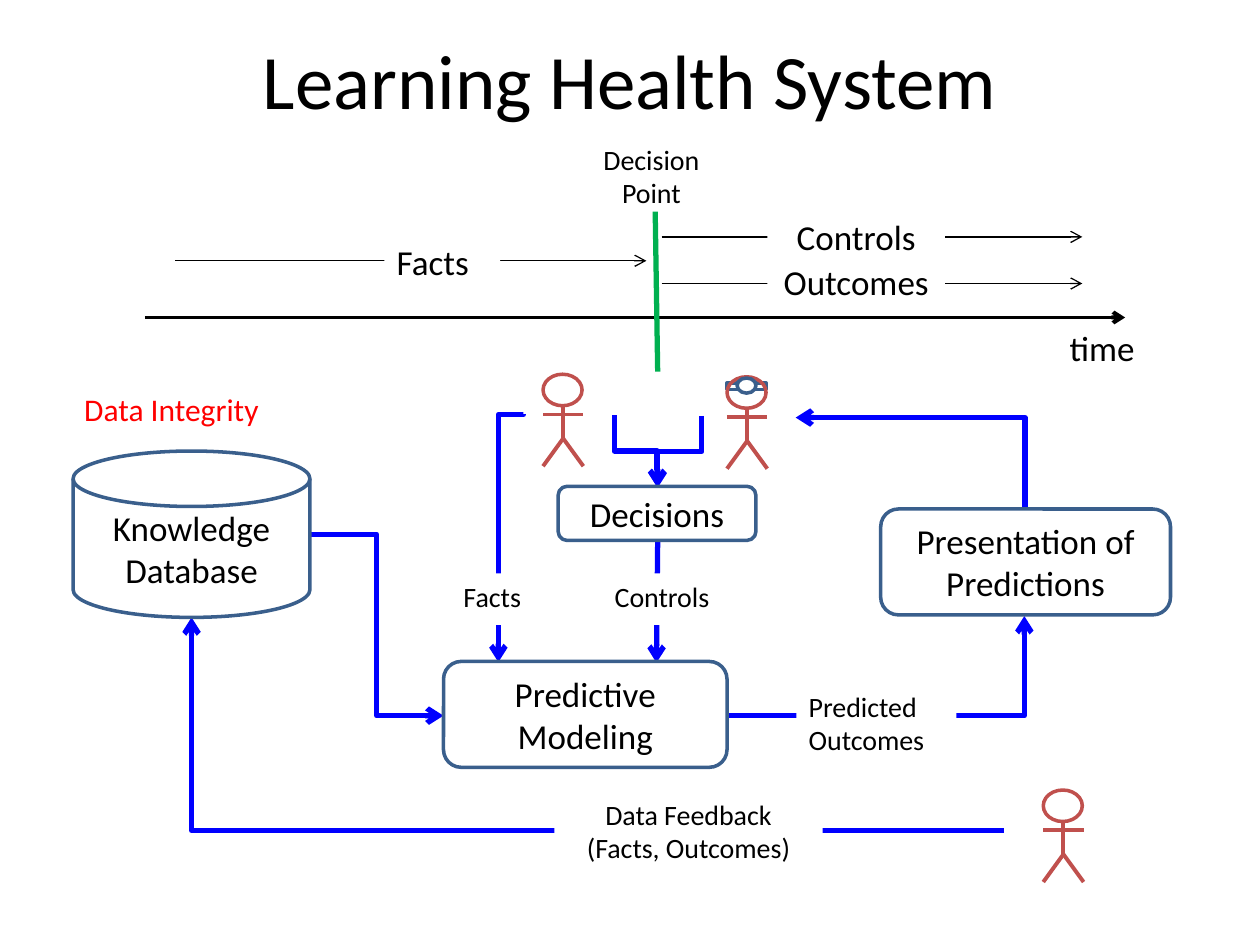
from pptx import Presentation
from pptx.dml.color import RGBColor
from pptx.enum.shapes import MSO_CONNECTOR, MSO_SHAPE
from pptx.enum.text import MSO_ANCHOR, PP_ALIGN
from pptx.oxml.ns import qn
from pptx.util import Inches, Pt
from lxml.etree import SubElement

COLORS = {"black": "000000", "white": "FFFFFF", "green": "00B050", "blue": "0000FF",
          "outline": "3A5F8C", "figure": "C0504D", "red": "FF0000"}

presentation = Presentation()
presentation.slide_width, presentation.slide_height = Inches(10), Inches(7.5)
slide = presentation.slides.add_slide(presentation.slide_layouts[6])


def add_line(x1, y1, x2, y2, color, width, arrow=False, bend=None, rotation=0, flip=None, adjust=None):
    """Straight line, or an elbow whose unrotated frame runs from (x1, y1) to (x2, y2)."""
    kind = MSO_CONNECTOR.ELBOW if bend else MSO_CONNECTOR.STRAIGHT
    connector = slide.shapes.add_connector(kind, Inches(x1), Inches(y1), Inches(x2), Inches(y2))
    connector.line.color.rgb = RGBColor.from_string(COLORS[color])
    connector.line.width = Pt(width)
    properties = connector._element.spPr
    if bend:
        geometry = properties.find(qn("a:prstGeom"))
        geometry.set("prst", bend)
        frame = properties.find(qn("a:xfrm"))
        frame.set("rot", str(rotation * 60000))
        if flip:
            frame.set(flip, "1")
        if adjust is not None:
            guide = SubElement(geometry.find(qn("a:avLst")), qn("a:gd"))
            guide.set("name", "adj1")
            guide.set("fmla", f"val {adjust}")
    if arrow:
        SubElement(properties.find(qn("a:ln")), qn("a:tailEnd")).set("type", "arrow")
    SubElement(properties, qn("a:effectLst"))


def add_shape(kind, left, top, width, height, lines=(), size=20, color="black", fill="white",
              outline=None, align=PP_ALIGN.CENTER, anchor=MSO_ANCHOR.MIDDLE, wrap=True):
    """Preset shape, or a text box when kind is None."""
    frame = [Inches(value) for value in (left, top, width, height)]
    if kind is None:
        shape = slide.shapes.add_textbox(*frame)
    else:
        shape = slide.shapes.add_shape(kind, *frame)
        shape.shadow.inherit = False
        if fill:
            shape.fill.solid()
            shape.fill.fore_color.rgb = RGBColor.from_string(COLORS[fill])
        else:
            shape.fill.background()
        if outline:
            shape.line.color.rgb = RGBColor.from_string(COLORS[outline])
            shape.line.width = Pt(2)
        else:
            shape.line.fill.background()
    text_frame = shape.text_frame
    text_frame.word_wrap = wrap
    text_frame.vertical_anchor = anchor
    for index, line in enumerate(lines):
        paragraph = text_frame.add_paragraph() if index else text_frame.paragraphs[0]
        paragraph.alignment = align
        run = paragraph.add_run()
        run.text = line
        run.font.name = "Calibri"
        run.font.size = Pt(size)
        run.font.color.rgb = RGBColor.from_string(COLORS[color])


# Title
add_shape(None, 0.5, 0, 9, 1.25, ["Learning Health System"], size=44)

# Timeline with the decision point
add_line(1.15, 2.52, 8.93, 2.52, "black", 2.25, arrow=True)
for start, end, y in [(1.39, 5.13, 2.07), (5.25, 8.59, 1.88), (5.25, 8.59, 2.25)]:
    add_line(start, y, end, y, "black", 0.75, arrow=True)
add_line(5.2, 1.68, 5.22, 2.95, "green", 3)

# Process flow: unrotated frame, bend, rotation, flip, adjustment
for *frame, bend, rotation, flip, adjust in [
    (2.46, 4.24, 3.52, 5.68, "bentConnector3", 0, None, 50000),
    (5.77, 4.89, 8.13, 5.68, "bentConnector2", 0, "flipV", None),
    (1.52, 4.9, 7.97, 6.59, "bentConnector2", 180, None, None),
    (6.86, 2.77, 7.59, 4.59, "bentConnector2", 270, "flipV", None),
    (3.07, 4.17, 5.04, 4.37, "bentConnector3", 90, None, 200),
    (5.11, 3.41, 5.68, 3.76, "bentConnector3", 90, None, 50000),
    (4.76, 3.41, 5.33, 3.75, "bentConnector3", 270, "flipH", 50000),
]:
    add_line(*frame, "blue", 3, True, bend, rotation, flip, adjust)
add_line(5.22, 4.3, 5.21, 5.26, "blue", 3, arrow=True)

# Process steps
for kind, *frame, label in [
    (MSO_SHAPE.FLOWCHART_MAGNETIC_DISK, 0.58, 3.58, 1.88, 1.32, "Knowledge Database"),
    (MSO_SHAPE.ROUNDED_RECTANGLE, 3.52, 5.25, 2.25, 0.84, "Predictive Modeling"),
    (MSO_SHAPE.ROUNDED_RECTANGLE, 6.99, 4.04, 2.3, 0.84, "Presentation of Predictions"),
    (MSO_SHAPE.ROUNDED_RECTANGLE, 4.43, 3.86, 1.57, 0.43, "Decisions"),
]:
    add_shape(kind, *frame, [label], outline="outline")

# White labels that interrupt the lines
for *frame, lines, size, align in [
    (3.05, 1.86, 0.92, 0.48, ["Facts"], 20, PP_ALIGN.LEFT),
    (6.09, 2.02, 1.41, 0.44, ["Outcomes"], 20, PP_ALIGN.CENTER),
    (6.09, 1.66, 1.41, 0.44, ["Controls"], 20, PP_ALIGN.CENTER),
    (6.32, 5.42, 1.27, 0.7, ["Predicted", "Outcomes"], 16, PP_ALIGN.LEFT),
    (4.4, 6.28, 2.13, 0.7, ["Data Feedback", "(Facts, Outcomes)"], 16, PP_ALIGN.CENTER),
    (4.78, 4.55, 1.08, 0.41, ["Controls"], 16, PP_ALIGN.LEFT),
    (3.58, 4.55, 0.78, 0.41, ["Facts"], 16, PP_ALIGN.LEFT),
]:
    add_shape(MSO_SHAPE.RECTANGLE, *frame, lines, size, align=align, anchor=MSO_ANCHOR.TOP, wrap=False)

# Plain labels
for *frame, label, size, color, align, wrap in [
    (8.39, 2.54, 0.76, 0.48, "time", 20, "black", PP_ALIGN.LEFT, False),
    (4.57, 1.08, 1.2, 0.7, "Decision Point", 16, "black", PP_ALIGN.CENTER, True),
    (0.57, 3.05, 2.08, 0.5, "Data Integrity", 18, "red", PP_ALIGN.LEFT, False),
]:
    add_shape(None, *frame, [label], size, color, align=align, anchor=MSO_ANCHOR.TOP, wrap=wrap)

# Stick figures: patient, doctor with head mirror, patient giving feedback
add_shape(MSO_SHAPE.RECTANGLE, 5.77, 3.04, 0.31, 0.05, outline="outline")
for left, top in [(4.31, 2.97), (5.77, 2.99), (8.28, 6.27)]:
    center, right, hip = left + 0.16, left + 0.32, top + 0.51
    add_shape(MSO_SHAPE.OVAL, left, top, 0.31, 0.25, fill=None, outline="figure")
    add_line(center, top + 0.25, center, hip, "figure", 2.25)
    for foot in (left, right):
        add_line(center, hip, foot, top + 0.73, "figure", 2.25)
    add_line(left, top + 0.32, right, top + 0.32, "figure", 2.25)
add_shape(MSO_SHAPE.FLOWCHART_CONNECTOR, 5.85, 3, 0.15, 0.12, outline="outline")

presentation.save("out.pptx")
